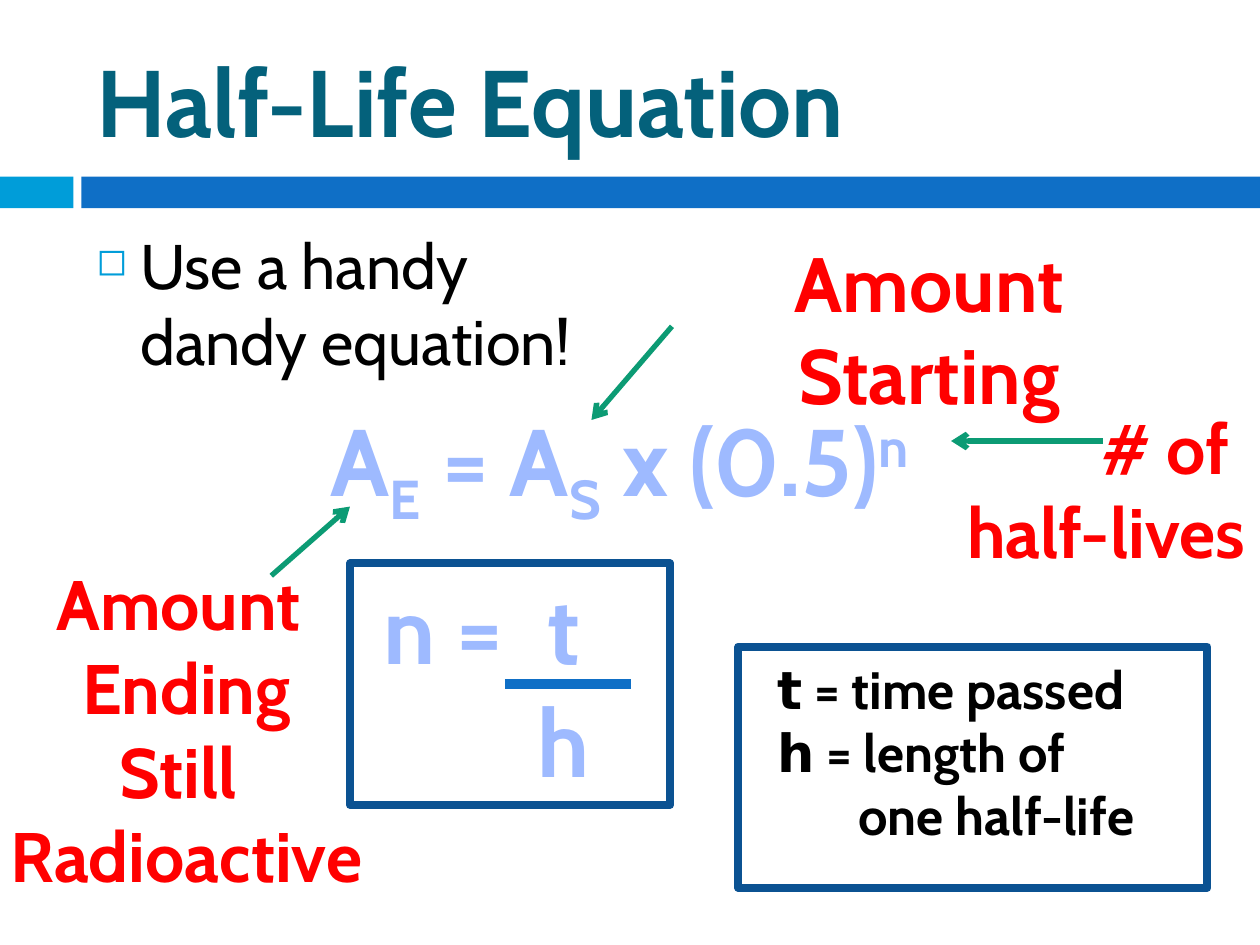
"""Build the half-life equation slide with labelled terms and a key."""
import dataclasses

import lxml.etree
import pptx
import pptx.dml.color
import pptx.enum.shapes
import pptx.enum.text
import pptx.oxml.ns
import pptx.util

Pt = pptx.util.Pt
ALIGN = pptx.enum.text.PP_ALIGN


@dataclasses.dataclass(frozen=True)
class Theme:
    font: str = "Cabin"
    symbol_font: str = "DejaVu Sans"
    title: str = "04617B"
    accent: str = "009DD9"
    band: str = "0F6FC6"
    equation: str = "9EBAFF"
    label: str = "FF0000"
    text: str = "000000"
    arrow: str = "0C9B74"
    frame: str = "0B5292"
    display_size: int = 54
    start_size: int = 44
    label_size: int = 40
    body_size: int = 36
    key_size: int = 30


THEME = Theme()


def rgb(value):
    return pptx.dml.color.RGBColor.from_string(value)


def add_xml(parent, tag, **attributes):
    return lxml.etree.SubElement(parent, pptx.oxml.ns.qn(tag), attributes)


def format_run(r, size, color, bold=True, font=THEME.font, baseline=0):
    r.font.name, r.font.size, r.font.bold = font, Pt(size), bold
    r.font.color.rgb = rgb(color)
    if baseline:
        r._r.get_or_add_rPr().set("baseline", str(baseline * 1000))


def format_text(tf, size, color, align, bold=True):
    for p in tf.paragraphs:
        p.alignment = align
        for r in p.runs:
            format_run(r, size, color, bold)


def add_box(s, left, top, width, height):
    sp = s.shapes.add_textbox(Pt(left), Pt(top), Pt(width), Pt(height))
    sp.text_frame.word_wrap = True
    return sp.text_frame


def add_text(s, box, text, size, color, align=ALIGN.CENTER, bold=True):
    tf = add_box(s, *box)
    tf.text = text
    format_text(tf, size, color, align, bold)
    return tf


def add_title(s, text):
    sp = s.shapes.title
    sp.left, sp.top, sp.width, sp.height = Pt(48), Pt(18), Pt(642), Pt(78)
    tf = sp.text_frame
    tf.text = text
    tf.auto_size = pptx.enum.text.MSO_AUTO_SIZE.NONE
    tf.vertical_anchor = pptx.enum.text.MSO_ANCHOR.MIDDLE
    format_text(tf, THEME.display_size, THEME.title, ALIGN.LEFT)


def add_bullet(s, box, text):
    tf = add_text(s, box, text, THEME.body_size, THEME.text, ALIGN.LEFT, False)
    p = tf.paragraphs[0]
    p.space_before = Pt(7)
    pPr = p._p.get_or_add_pPr()
    pPr.set("marL", str(Pt(25)))
    pPr.set("indent", str(-Pt(25)))
    add_xml(add_xml(pPr, "a:buClr"), "a:srgbClr", val=THEME.accent)
    add_xml(pPr, "a:buSzPct", val="60000")
    add_xml(pPr, "a:buChar", char="◻")


def add_equation(s, box, terms):
    p = add_box(s, *box).paragraphs[0]
    p.alignment = ALIGN.CENTER
    for text, baseline in terms:
        r = p.add_run()
        r.text = text
        format_run(r, THEME.display_size, THEME.equation, baseline=baseline)


def add_key(s, box, rows):
    tf = add_box(s, *box)
    for i, (symbol, meaning) in enumerate(rows):
        p = tf.paragraphs[0] if i == 0 else tf.add_paragraph()
        for text, font in ((symbol, THEME.symbol_font), (meaning, THEME.font)):
            if text:
                r = p.add_run()
                r.text = text
                format_run(r, THEME.key_size, THEME.text, font=font)
        if not symbol:
            p._p.get_or_add_pPr().set("marL", str(Pt(46.5)))


def add_rect(s, box, fill=None, line=None):
    kind = pptx.enum.shapes.MSO_SHAPE.RECTANGLE
    sp = s.shapes.add_shape(kind, *map(Pt, box))
    sp.shadow.inherit = False
    if fill:
        sp.fill.solid()
        sp.fill.fore_color.rgb = rgb(fill)
    else:
        sp.fill.background()
    if line:
        sp.line.color.rgb = rgb(line)
        sp.line.width = Pt(4.5)
    else:
        sp.line.fill.background()


def add_line(s, ends, color, width, arrow=False):
    kind = pptx.enum.shapes.MSO_CONNECTOR.STRAIGHT
    sp = s.shapes.add_connector(kind, *map(Pt, ends))
    sp.line.color.rgb = rgb(color)
    sp.line.width = Pt(width)
    if arrow:
        add_xml(sp.line._get_or_add_ln(), "a:tailEnd", type="arrow")
    add_xml(sp._element.spPr, "a:effectLst")


def main():
    prs = pptx.Presentation()
    prs.slide_width, prs.slide_height = Pt(720), Pt(540)
    s = prs.slides.add_slide(prs.slide_layouts[5])

    add_rect(s, (0, 101, 42, 18), fill=THEME.accent)
    add_rect(s, (46.5, 101, 673.5, 18), fill=THEME.band)
    add_title(s, "Half-Life Equation")
    add_bullet(s, (48, 126, 300, 100), "Use a handy \vdandy equation!")

    add_equation(s, (165, 226, 378, 73), [
        ("A", 0), ("E", -25), (" = A", 0), ("S", -25), (" x (0.5)", 0), ("n", 30)])

    labels = [
        ((-15, 317, 243, 201), "Amount \vEnding\nStill \vRadioactive",
         THEME.label_size, ALIGN.CENTER),
        ((423, 131, 216, 114), "Amount Starting", THEME.start_size, ALIGN.CENTER),
        ((520.5, 227.5, 198, 104), "# of \vhalf-lives", THEME.label_size, ALIGN.RIGHT),
    ]
    for box, text, size, align in labels:
        add_text(s, box, text, size, THEME.label, align)
    for ends in ((155, 329, 200, 289.5), (384, 186.5, 338, 240), (630, 252, 543.5, 252)):
        add_line(s, ends, THEME.arrow, 3, arrow=True)

    add_key(s, (437, 372, 253, 117), [
        ("t", " = time passed"), ("h", " = length of"), ("", "one half-life")])
    add_text(s, (212, 322, 90, 73), "n =", THEME.display_size, THEME.equation, ALIGN.LEFT)
    add_text(s, (286, 322, 72, 138), "t\nh", THEME.display_size, THEME.equation)
    add_line(s, (288.5, 391, 360.5, 391), THEME.band, 6)
    for box in ((200, 322, 183, 138), (422, 369.5, 268, 138)):
        add_rect(s, box, line=THEME.frame)

    prs.save("out.pptx")


if __name__ == "__main__":
    main()
